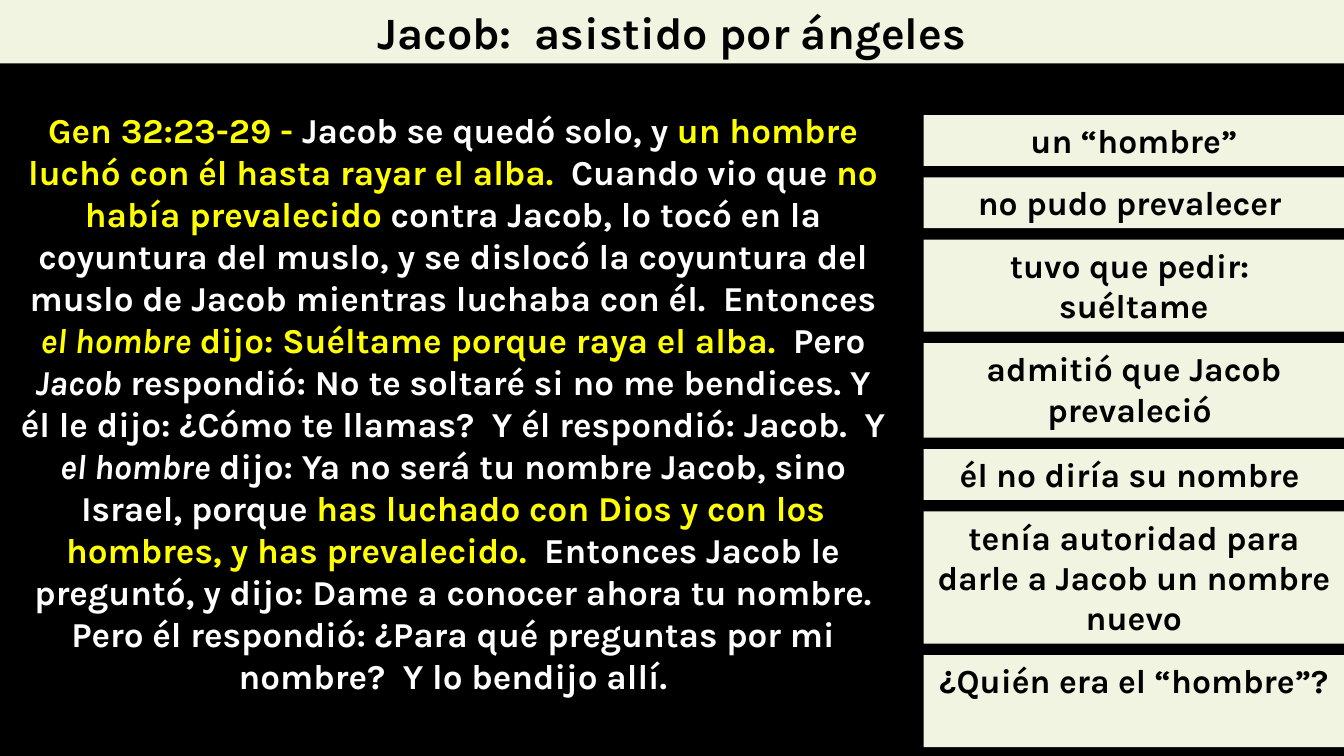
import pptx
import pptx.util
import pptx.dml.color
import pptx.enum.shapes
import pptx.enum.text
from pptx.util import Cm

COLORS = {"back": "000000", "cream": "F1F4E0", "dark": "000000",
          "white": "FFFFFF", "yellow": "FFFF00"}
FONT = "Karla"

VERSE = [
    ("Gen 32:23-29 - ", "yellow", False),
    ("Jacob se quedó solo, y ", "white", False),
    ("un hombre luchó con él hasta rayar el alba.  ", "yellow", False),
    ("Cuando vio que ", "white", False),
    ("no había prevalecido", "yellow", False),
    (" contra Jacob, lo tocó en la coyuntura del muslo, y se dislocó la "
     "coyuntura del muslo de Jacob mientras luchaba con él.  Entonces ",
     "white", False),
    ("el hombre", "yellow", True),
    (" dijo: Suéltame porque raya el alba.  ", "yellow", False),
    ("Pero ", "white", False),
    ("Jacob", "white", True),
    (" respondió: No te soltaré si no me bendices. Y él le dijo: ¿Cómo te "
     "llamas?  Y él respondió: Jacob.  Y ", "white", False),
    ("el hombre", "white", True),
    (" dijo: Ya no será tu nombre Jacob, sino Israel, porque ",
     "white", False),
    ("has luchado con Dios y con los hombres, y has prevalecido.  ",
     "yellow", False),
    ("Entonces Jacob le preguntó, y dijo: Dame a conocer ahora tu nombre. "
     "Pero él respondió: ¿Para qué preguntas por mi nombre?  Y lo bendijo "
     "allí.", "white", False),
]

NOTES = [
    ("un “hombre”", 1.28),
    ("no pudo prevalecer ", 1.28),
    ("tuvo que pedir:  suéltame", 2.32),
    ("admitió que Jacob prevaleció ", 2.38),
    ("él no diría su nombre ", 1.28),
    ("tenía autoridad para darle a Jacob un nombre nuevo", 3.33),
    ("¿Quién era el “hombre”?", 2.32),
]
TOP, GAP = 2.9, 0.29


def tint(name):
    """Return the named colour."""
    return pptx.dml.color.RGBColor.from_string(COLORS[name])


def style(frame, size):
    """Wrap the frame, centre its text and return the paragraph."""
    frame.word_wrap = True
    frame.vertical_anchor = pptx.enum.text.MSO_ANCHOR.TOP
    para = frame.paragraphs[0]
    para.alignment = pptx.enum.text.PP_ALIGN.CENTER
    para.font.name = FONT
    para.font.size = pptx.util.Pt(size)
    para.font.bold = True
    return para


def add_bar(slide, text, left, top, width, height, size):
    """Add a cream bar with dark text."""
    bar = slide.shapes.add_shape(pptx.enum.shapes.MSO_SHAPE.RECTANGLE,
                                 Cm(left), Cm(top), Cm(width), Cm(height))
    bar.shadow.inherit = False
    bar.fill.solid()
    bar.fill.fore_color.rgb = tint("cream")
    bar.line.fill.background()
    para = style(bar.text_frame, size)
    para.font.color.rgb = tint("dark")
    para.add_run().text = text


def add_verse(slide):
    """Add the passage with its marked phrases."""
    box = slide.shapes.add_textbox(Cm(0.2), Cm(2.62), Cm(22.43), Cm(16.28))
    para = style(box.text_frame, 25)
    for text, color, slant in VERSE:
        run = para.add_run()
        run.text = text
        run.font.color.rgb = tint(color)
        run.font.italic = slant


def main():
    """Build and save the slide."""
    deck = pptx.Presentation()
    deck.slide_width, deck.slide_height = Cm(33.87), Cm(19.05)
    slide = deck.slides.add_slide(deck.slide_layouts[6])
    slide.background.fill.solid()
    slide.background.fill.fore_color.rgb = tint("back")
    add_verse(slide)
    top = TOP
    for text, height in NOTES:
        add_bar(slide, text, 23.28, top, 10.59, height, 24)
        top += height + GAP
    add_bar(slide, "Jacob:  asistido por ángeles", 0, 0, 33.87, 1.6, 32)
    deck.save("out.pptx")


if __name__ == "__main__":
    main()
